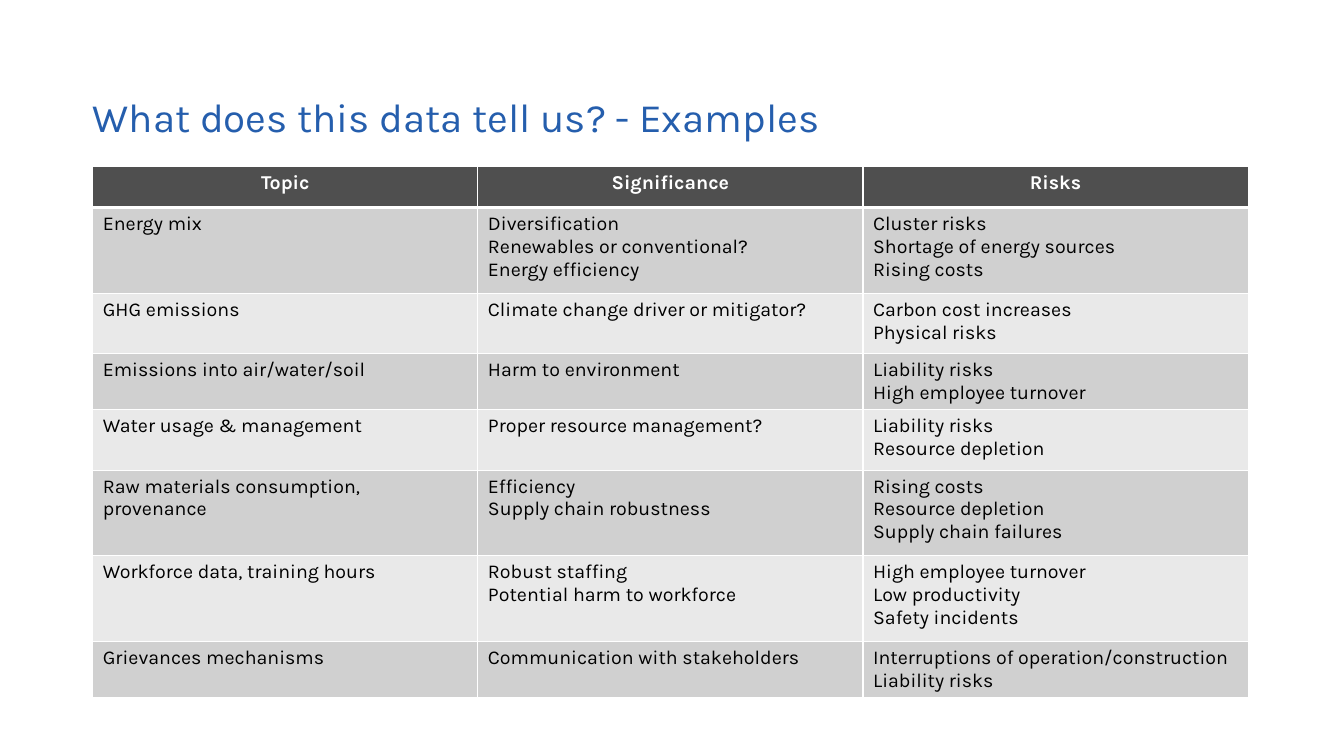
from dataclasses import dataclass

from lxml.etree import SubElement
from pptx import Presentation
from pptx.dml.color import RGBColor
from pptx.enum.text import MSO_ANCHOR, MSO_AUTO_SIZE, PP_ALIGN
from pptx.oxml.ns import qn
from pptx.util import Inches, Pt


@dataclass(frozen=True)
class Theme:
    font: str = "Karla"
    title_color: str = "255EAD"
    header_fill: str = "4F4F4F"
    header_text: str = "FFFFFF"
    body_text: str = "000000"
    bands: tuple = ("D0D0D0", "E9E9E9")
    border: str = "FFFFFF"
    title_size: float = 28.8
    table_size: float = 14
    thin: float = 1
    thick: float = 3


class SlideBuilder:
    def __init__(self, prs, theme):
        self.theme = theme
        self.s = prs.slides.add_slide(prs.slide_layouts[5])

    def format_text(self, p, size, color, bold=False, align=PP_ALIGN.LEFT):
        p.alignment = align
        for r in p.runs:
            values = {"name": self.theme.font, "size": Pt(size), "bold": bold}
            for key, value in values.items():
                setattr(r.font, key, value)
            r.font.color.rgb = RGBColor.from_string(color)

    def title(self, text, left, top, width, height):
        sp = self.s.shapes.title
        box = {"left": left, "top": top, "width": width, "height": height}
        for key, value in box.items():
            setattr(sp, key, Inches(value))
        tf = sp.text_frame
        tf.text = text
        frame = {"margin_left": 0, "margin_right": Inches(0.1),
                 "margin_top": Inches(0.05), "margin_bottom": Inches(0.05),
                 "vertical_anchor": MSO_ANCHOR.BOTTOM, "word_wrap": True,
                 "auto_size": MSO_AUTO_SIZE.NONE}
        for key, value in frame.items():
            setattr(tf, key, value)
        p = tf.paragraphs[0]
        p.line_spacing = 0.9
        self.format_text(p, self.theme.title_size, self.theme.title_color)

    def borders(self, cell, row):
        # The rule between header and body is thicker than the others
        t = self.theme
        widths = {"lnL": t.thin, "lnR": t.thin,
                  "lnT": t.thick if row == 1 else t.thin,
                  "lnB": t.thick if row == 0 else t.thin}
        tc_pr = cell._tc.get_or_add_tcPr()
        for side, width in widths.items():
            ln = SubElement(tc_pr, qn(f"a:{side}"), w=str(Pt(width)))
            fill = SubElement(ln, qn("a:solidFill"))
            SubElement(fill, qn("a:srgbClr"), val=t.border)

    def cell(self, cell, text, row):
        t = self.theme
        header = row == 0
        cell.text = text
        self.borders(cell, row)
        cell.fill.solid()
        fill = t.header_fill if header else t.bands[(row - 1) % 2]
        cell.fill.fore_color.rgb = RGBColor.from_string(fill)
        for p in cell.text_frame.paragraphs:
            self.format_text(p, t.table_size,
                             t.header_text if header else t.body_text,
                             header, PP_ALIGN.CENTER if header else PP_ALIGN.LEFT)

    def table(self, rows, heights, left, top, col_width):
        cols = len(rows[0])
        table = self.s.shapes.add_table(
            len(rows), cols, Inches(left), Inches(top),
            Inches(col_width * cols), Inches(sum(heights))).table
        for col in table.columns:
            col.width = Inches(col_width)
        for i, (texts, height) in enumerate(zip(rows, heights)):
            table.rows[i].height = Inches(height)
            for j, text in enumerate(texts):
                self.cell(table.cell(i, j), text, i)


# Table content: one line per paragraph
ROWS = [
    ("Topic", "Significance", "Risks"),
    ("Energy mix",
     "Diversification\nRenewables or conventional?\nEnergy efficiency",
     "Cluster risks\nShortage of energy sources\nRising costs"),
    ("GHG emissions", "Climate change driver or mitigator?",
     "Carbon cost increases\nPhysical risks"),
    ("Emissions into air/water/soil", "Harm to environment",
     "Liability risks\nHigh employee turnover"),
    ("Water usage & management", "Proper resource management?",
     "Liability risks\nResource depletion"),
    ("Raw materials consumption, provenance",
     "Efficiency\nSupply chain robustness",
     "Rising costs\nResource depletion\nSupply chain failures"),
    ("Workforce data, training hours",
     "Robust staffing\nPotential harm to workforce",
     "High employee turnover\nLow productivity\nSafety incidents"),
    ("Grievances mechanisms", "Communication with stakeholders",
     "Interruptions of operation/construction\nLiability risks"),
]
HEIGHTS = [0.41, 0.85, 0.6, 0.41, 0.6, 0.85, 0.85, 0.41]


def main():
    prs = Presentation()
    prs.slide_width, prs.slide_height = Inches(13.33), Inches(7.5)
    slide = SlideBuilder(prs, Theme())
    slide.title("What does this data tell us? - Examples", 0.92, 0.88, 10.35, 0.57)
    slide.table(ROWS, HEIGHTS, 0.92, 1.65, 3.82)
    prs.save("out.pptx")


if __name__ == "__main__":
    main()
